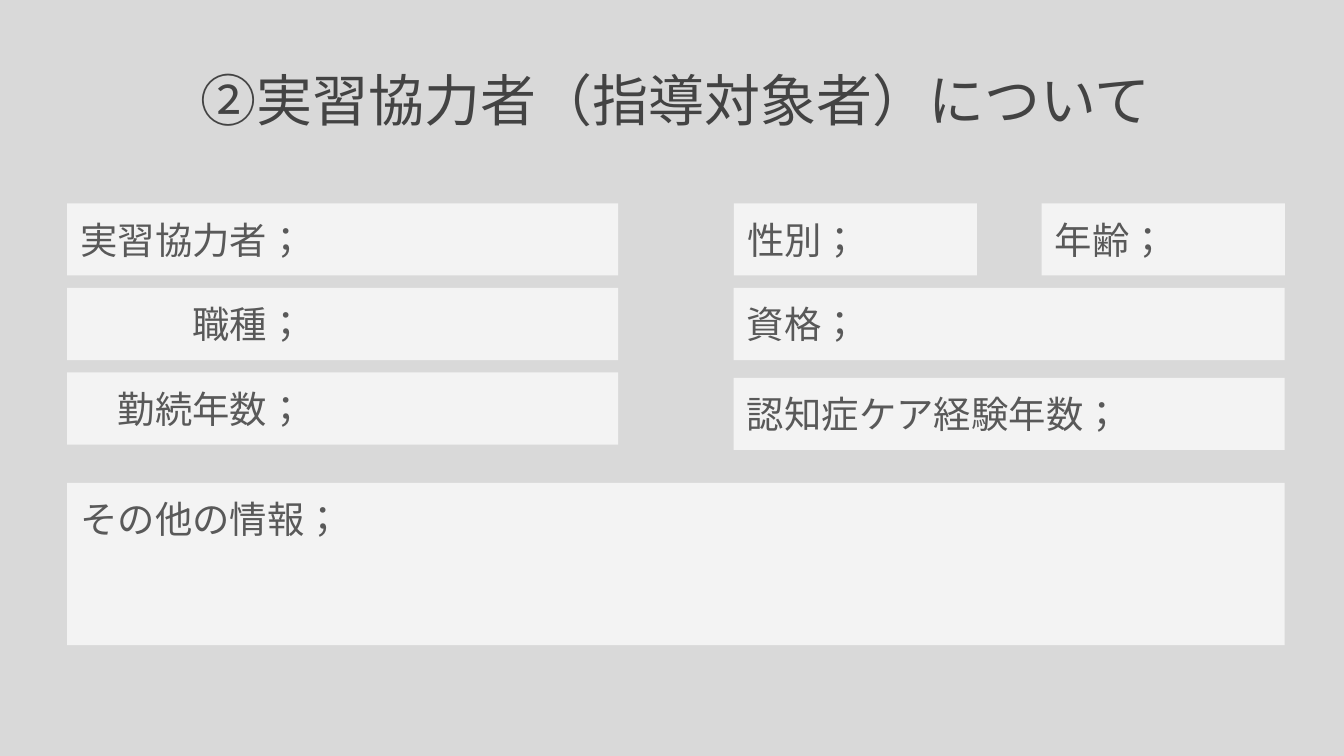
from lxml import etree
from pptx import Presentation
from pptx.dml.color import RGBColor
from pptx.enum.lang import MSO_LANGUAGE_ID
from pptx.enum.shapes import MSO_SHAPE
from pptx.enum.text import MSO_ANCHOR, PP_ALIGN
from pptx.oxml.ns import qn
from pptx.util import Pt

RECTANGLE = MSO_SHAPE.RECTANGLE
JAPANESE = MSO_LANGUAGE_ID.JAPANESE
TOP, MIDDLE = MSO_ANCHOR.TOP, MSO_ANCHOR.MIDDLE
LEFT, CENTER = PP_ALIGN.LEFT, PP_ALIGN.CENTER

COLORS = {"background": "D9D9D9", "field": "F3F3F3", "title": "434343", "label": "595959"}
LATIN_FONT, JAPANESE_FONT = "Arial", "Noto Sans CJK JP"
TITLE_SIZE, LABEL_SIZE = 30, 20

# Layout grid, in points
MARGIN, FULL_WIDTH = 36, 652.3
COLUMN_WIDTH, HALF_WIDTH = 295.2, 130.3
RIGHT_EDGE = MARGIN + FULL_WIDTH
RIGHT_COLUMN = RIGHT_EDGE - COLUMN_WIDTH
FIRST_ROW, ROW_STEP, ROW_HEIGHT = 108.9, 45.3, 38.7
ROWS = [FIRST_ROW + ROW_STEP * row for row in range(3)]
EXPERIENCE_TOP = 202.4
NOTES_TOP, NOTES_HEIGHT = 258.7, 87


class FormSlide:
    """Holds the style and the current slide."""

    def __init__(self, deck):
        self.slide = deck.slides.add_slide(deck.slide_layouts[5])
        fill = self.slide.background.fill
        fill.solid()
        fill.fore_color.rgb = self.color("background")

    def color(self, name):
        return RGBColor.from_string(COLORS[name])

    def set_text(self, shape, text, size, color, font, align, anchor, inset):
        frame = shape.text_frame
        frame.text = text
        frame.word_wrap = True
        frame.vertical_anchor = anchor
        frame.margin_left = frame.margin_right = Pt(7.2)
        frame.margin_top = frame.margin_bottom = Pt(inset)
        para = frame.paragraphs[0]
        para.alignment = align
        span = para.runs[0]
        span.font.size = Pt(size)
        span.font.name = font
        span.font.language_id = JAPANESE
        span.font.color.rgb = self.color(color)
        # East Asian text needs its own typeface entry
        east_asian = etree.SubElement(span._r.get_or_add_rPr(), qn("a:ea"))
        east_asian.set("typeface", font)
        return para

    def title(self, text, left, top, width, height):
        box = self.slide.shapes.title
        box.left, box.top, box.width, box.height = map(Pt, (left, top, width, height))
        self.set_text(box, text, TITLE_SIZE, "title", JAPANESE_FONT, CENTER, MIDDLE, 3.6)

    def field(self, text, left, top, width, height=ROW_HEIGHT, indent=0, font=LATIN_FONT):
        box = self.slide.shapes.add_shape(RECTANGLE, *map(Pt, (left, top, width, height)))
        box.shadow.inherit = False
        box.fill.solid()
        box.fill.fore_color.rgb = self.color("field")
        box.line.fill.background()
        para = self.set_text(box, text, LABEL_SIZE, "label", font, LEFT, TOP, 7.2)
        # Indent is counted in full-width characters
        para._p.get_or_add_pPr().set("marL", str(Pt(indent * LABEL_SIZE)))


def main():
    deck = Presentation()
    deck.slide_width, deck.slide_height = Pt(720), Pt(405)
    form = FormSlide(deck)

    form.title("②実習協力者（指導対象者）について", MARGIN, 16.6, FULL_WIDTH, 72.7)

    # Left column, labels aligned on their last character
    left_labels = [("実習協力者；", 0), ("職種；", 3), ("勤続年数；", 1)]
    for top, (label, indent) in zip(ROWS, left_labels):
        form.field(label, MARGIN, top, COLUMN_WIDTH, indent=indent)

    # Right column
    form.field("性別；", RIGHT_COLUMN, ROWS[0], HALF_WIDTH)
    form.field("年齢；", RIGHT_EDGE - HALF_WIDTH, ROWS[0], HALF_WIDTH)
    form.field("資格；", RIGHT_COLUMN, ROWS[1], COLUMN_WIDTH)
    form.field("認知症ケア経験年数；", RIGHT_COLUMN, EXPERIENCE_TOP, COLUMN_WIDTH)

    # Free text area
    form.field("その他の情報；", MARGIN, NOTES_TOP, FULL_WIDTH, NOTES_HEIGHT, font=JAPANESE_FONT)

    deck.save("out.pptx")


if __name__ == "__main__":
    main()
